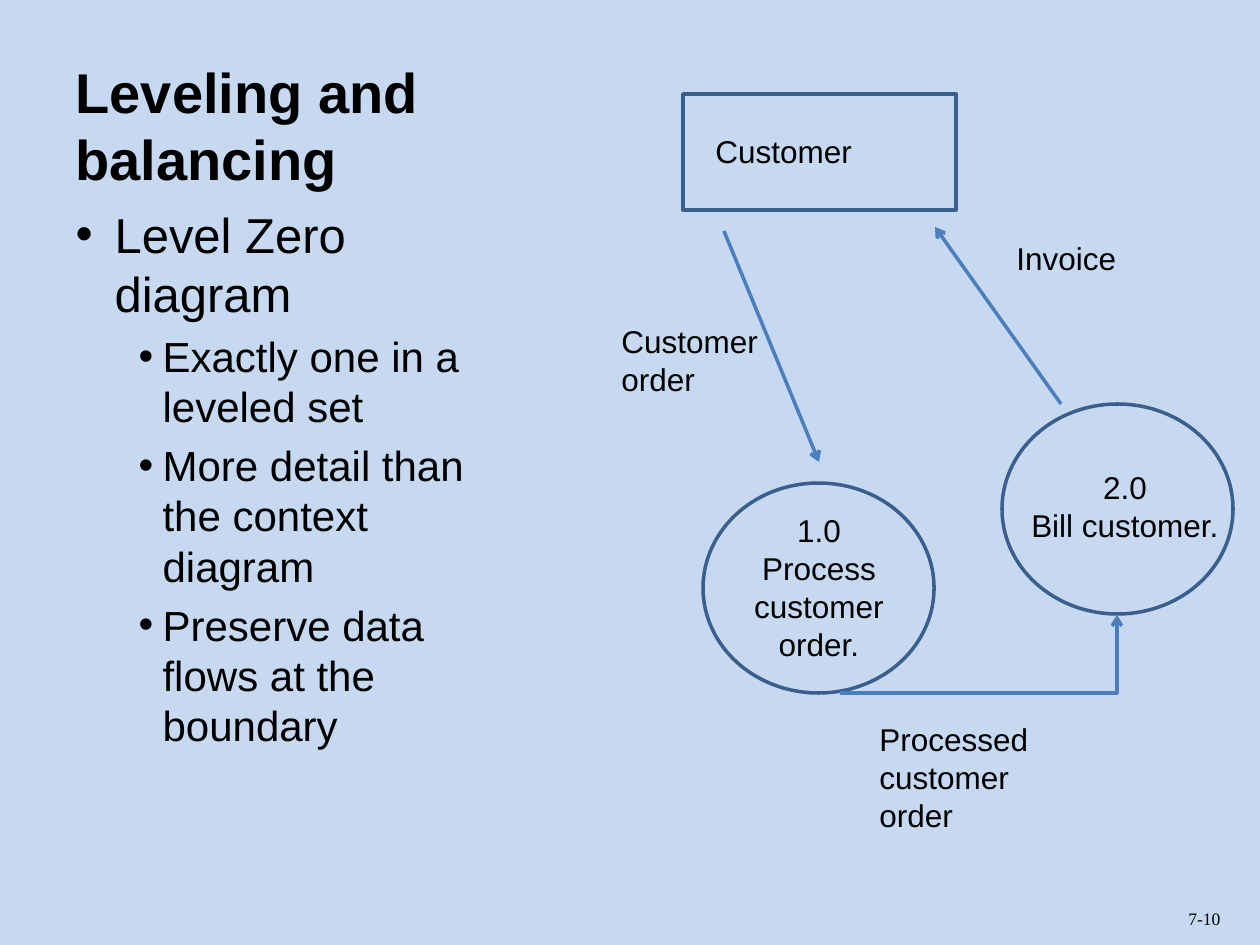
from dataclasses import dataclass

from lxml.etree import SubElement
from pptx import Presentation
from pptx.dml.color import RGBColor as Rgb
from pptx.enum.shapes import MSO_CONNECTOR as Link, MSO_SHAPE as Shape
from pptx.enum.text import MSO_ANCHOR as Anchor, MSO_AUTO_SIZE as Fit, PP_ALIGN as Align
from pptx.oxml.ns import qn
from pptx.util import Emu, Pt

EMU_PER_PX = 914400 / 126


@dataclass(frozen=True)
class Theme:
    background: str = "C6D9F1"
    ink: str = "000000"
    outline: str = "3A5F8C"
    flow: str = "4B7EBC"
    font: str = "Arial"
    number_font: str = "Times New Roman"
    title: int = 32
    topic: int = 28
    detail: int = 24
    label: int = 18
    number: int = 10
    stroke: int = 2


THEME = Theme()


def px(*lengths):
    return [Emu(round(length * EMU_PER_PX)) for length in lengths]


def write(para, text, size=THEME.label, font=THEME.font, bold=False, align=Align.LEFT):
    para.alignment = align
    span = para.add_run()
    span.text = text
    span.font.size = Pt(size)
    span.font.name = font
    span.font.bold = bold
    span.font.color.rgb = Rgb.from_string(THEME.ink)


def paragraphs(frame, count):
    return [frame.paragraphs[0]] + [frame.add_paragraph() for _ in range(count - 1)]


def place(box, left, top, width, height):
    box.left, box.top, box.width, box.height = px(left, top, width, height)


def add_label(page, lines, left, top, width, height, **style):
    frame = page.shapes.add_textbox(*px(left, top, width, height)).text_frame
    frame.word_wrap = True
    for para, line in zip(paragraphs(frame, len(lines)), lines):
        write(para, line, **style)


def add_outline(page, kind, left, top, width, height):
    box = page.shapes.add_shape(kind, *px(left, top, width, height))
    box.shadow.inherit = False
    box.fill.background()
    box.line.color.rgb = Rgb.from_string(THEME.outline)
    box.line.width = Pt(THEME.stroke)


def add_flow(page, start, end, kind=Link.STRAIGHT):
    flow = page.shapes.add_connector(kind, *px(*start, *end))
    flow.line.color.rgb = Rgb.from_string(THEME.flow)
    flow.line.width = Pt(THEME.stroke)
    SubElement(flow.line._get_or_add_ln(), qn("a:tailEnd"), type="arrow")
    properties = flow._element.spPr
    SubElement(properties, qn("a:effectLst"))
    if kind == Link.ELBOW:
        properties.find(qn("a:prstGeom")).set("prst", "bentConnector2")


def set_bullet(para, margin, hang):
    properties = para._p.get_or_add_pPr()
    indent, offset = px(margin, -hang)
    properties.set("marL", str(indent))
    properties.set("indent", str(offset))
    SubElement(properties, qn("a:buFont"), typeface=THEME.font)
    SubElement(properties, qn("a:buChar"), char="•")


def fill_title(page, text):
    title = page.shapes.title
    place(title, 63, 38, 415, 160)
    frame = title.text_frame
    frame.auto_size = Fit.NONE
    frame.vertical_anchor = Anchor.BOTTOM
    write(frame.paragraphs[0], text, size=THEME.title, bold=True)


def fill_body(page, topic, details):
    body = page.placeholders[1]
    place(body, 63, 198, 415, 646)
    frame = body.text_frame
    frame.auto_size = Fit.NONE
    first, *others = paragraphs(frame, len(details) + 1)
    write(first, topic, size=THEME.topic)
    set_bullet(first, 39, 39)
    for para, detail in zip(others, details):
        para.level = 1
        write(para, detail, size=THEME.detail)
        set_bullet(para, 87, 24)


def main():
    deck = Presentation()
    deck.slide_width, deck.slide_height = px(1260, 945)
    page = deck.slides.add_slide(deck.slide_layouts[1])
    page.background.fill.solid()
    page.background.fill.fore_color.rgb = Rgb.from_string(THEME.background)

    fill_title(page, "Leveling and balancing")
    fill_body(page, "Level Zero diagram", [
        "Exactly one in a leveled set",
        "More detail than the context diagram",
        "Preserve data flows at the boundary",
    ])

    add_outline(page, Shape.RECTANGLE, 683, 94, 273, 116)
    for left, top in [(703, 483), (1002, 404)]:
        add_outline(page, Shape.OVAL, left, top, 231, 210)

    add_flow(page, (724, 231), (819, 462))
    add_flow(page, (1061, 404), (935, 227))
    add_flow(page, (840, 693), (1117, 615), Link.ELBOW)

    add_label(page, ["Customer"], 703, 126, 242, 50)
    add_label(page, ["Customer", "order"], 609, 316, 242, 89)
    add_label(page, ["Invoice"], 1004, 233, 242, 50)
    add_label(page, ["1.0", "Process customer order."], 698, 505, 242, 165, align=Align.CENTER)
    add_label(page, ["2.0", "Bill customer."], 1004, 462, 242, 89, align=Align.CENTER)
    add_label(page, ["Processed customer", "order"], 867, 714, 242, 127)
    add_label(page, ["7-10"], 1176, 902, 84, 34, size=THEME.number, font=THEME.number_font)

    deck.save("out.pptx")


if __name__ == "__main__":
    main()
